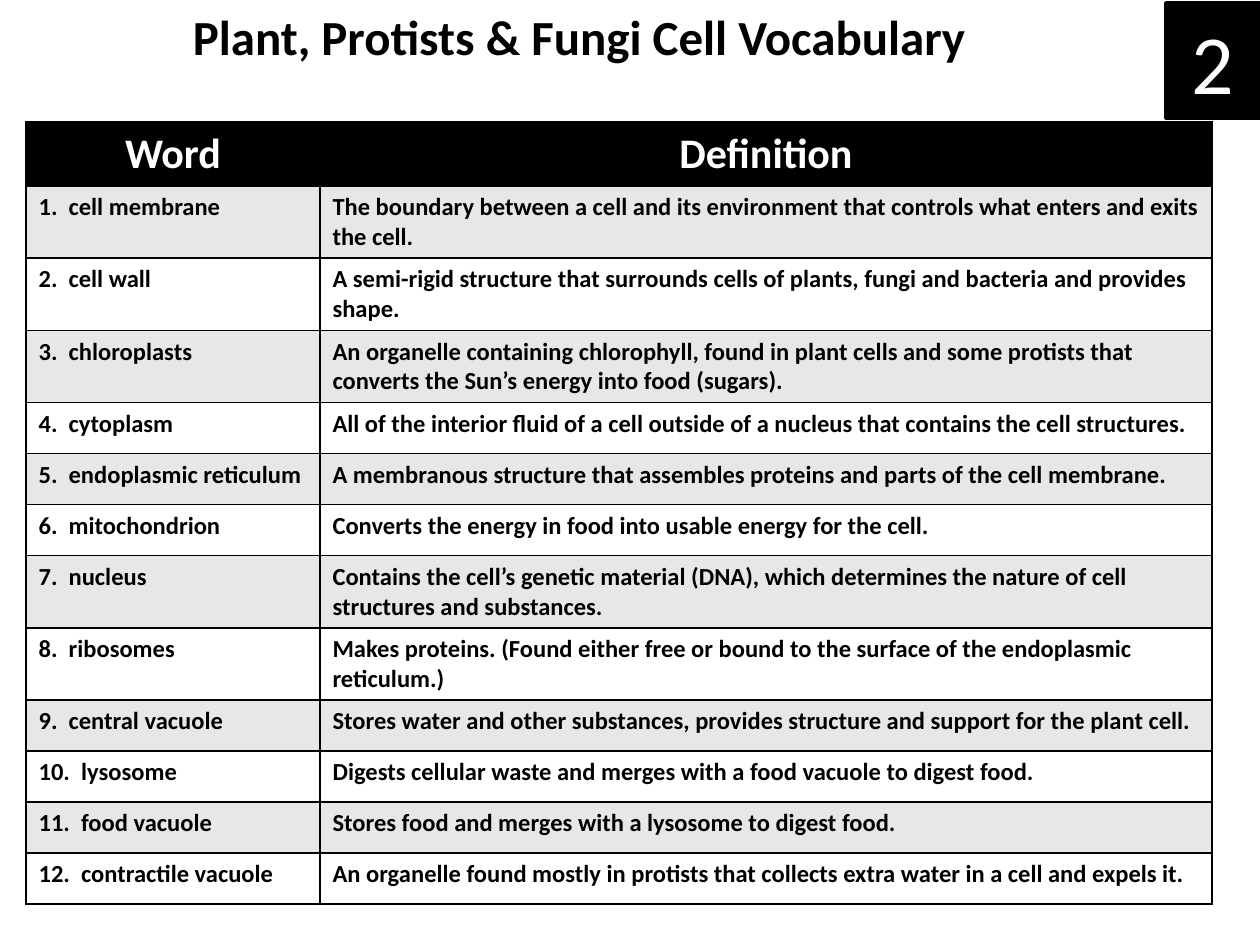
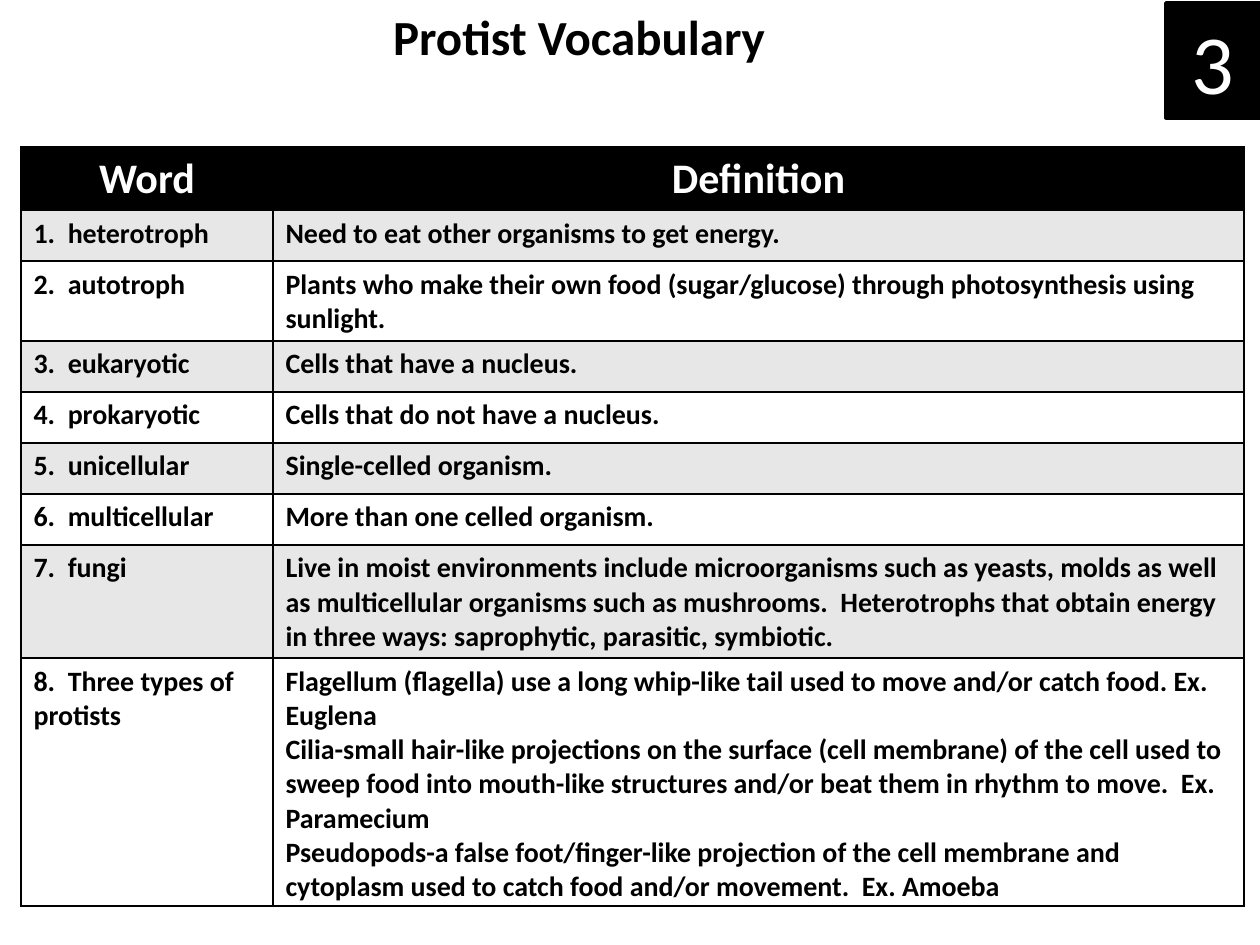
from dataclasses import dataclass

import pptx
import pptx.dml.color
import pptx.enum.shapes
import pptx.enum.text
import pptx.oxml
import pptx.oxml.ns
import pptx.slide
import pptx.table
import pptx.text.text
import pptx.util

# Shared scale, colours and text formats
PX_PER_INCH = 126
BLACK = pptx.dml.color.RGBColor(0x00, 0x00, 0x00)
WHITE = pptx.dml.color.RGBColor(0xFF, 0xFF, 0xFF)
GREY = pptx.dml.color.RGBColor(0xE7, 0xE7, 0xE7)
FONT = "Calibri"
CENTER = pptx.enum.text.PP_ALIGN.CENTER
LEFT = pptx.enum.text.PP_ALIGN.LEFT

TITLE_FORMAT = {"name": FONT, "size": pptx.util.Pt(28), "bold": True}
BADGE_FORMAT = {"name": FONT, "size": pptx.util.Pt(48), "bold": False}
HEADER_FORMAT = {"name": FONT, "size": pptx.util.Pt(24), "bold": True}

# Shared layout, in px
TITLE_CENTER, TITLE_HEIGHT = 579, 72
BADGE_BOX = (1166, 3, 94, 115)
HEADER_HEIGHT, ROW_HEIGHT = 49, 51


@dataclass(frozen=True)
class Term:
    word: str
    definition: str


@dataclass(frozen=True)
class VocabularyPage:
    number: int
    title: str
    title_width: int
    left: int
    top: int
    word_width: int
    definition_width: int
    text_size: int
    terms: tuple[Term, ...]


CELL_TERMS = (
    Term("cell membrane", "The boundary between a cell and its environment that "
         "controls what enters and exits the cell."),
    Term("cell wall", "A semi-rigid structure that surrounds cells of plants, fungi "
         "and bacteria and provides shape."),
    Term("chloroplasts", "An organelle containing chlorophyll, found in plant cells and "
         "some protists that converts the Sun’s energy into food (sugars)."),
    Term("cytoplasm", "All of the interior fluid of a cell outside of a nucleus that "
         "contains the cell structures."),
    Term("endoplasmic reticulum", "A membranous structure that assembles proteins and "
         "parts of the cell membrane."),
    Term("mitochondrion", "Converts the energy in food into usable energy for the cell."),
    Term("nucleus", "Contains the cell’s genetic material (DNA), which determines the "
         "nature of cell structures and substances."),
    Term("ribosomes", "Makes proteins. (Found either free or bound to the surface of "
         "the endoplasmic reticulum.)"),
    Term("central vacuole", "Stores water and other substances, provides structure and "
         "support for the plant cell."),
    Term("lysosome", "Digests cellular waste and merges with a food vacuole to digest food."),
    Term("food vacuole", "Stores food and merges with a lysosome to digest food."),
    Term("contractile vacuole", "An organelle found mostly in protists that collects "
         "extra water in a cell and expels it."),
)

PROTIST_TERMS = (
    Term("heterotroph", "Need to eat other organisms to get energy."),
    Term("autotroph", "Plants who make their own food (sugar/glucose) through "
         "photosynthesis using sunlight."),
    Term("eukaryotic", "Cells that have a nucleus."),
    Term("prokaryotic", "Cells that do not have a nucleus."),
    Term("unicellular", "Single-celled organism."),
    Term("multicellular", "More than one celled organism."),
    Term("fungi", "Live in moist environments include microorganisms such as yeasts, "
         "molds as well as multicellular organisms such as mushrooms.  Heterotrophs "
         "that obtain energy in three ways: saprophytic, parasitic, symbiotic."),
    Term("Three types of protists",
         "Flagellum (flagella) use a long whip-like tail used to move and/or catch "
         "food. Ex. Euglena\n"
         "Cilia-small hair-like projections on the surface (cell membrane) of the cell "
         "used to sweep food into mouth-like structures and/or beat them in rhythm to "
         "move.  Ex. Paramecium\n"
         "Pseudopods-a false foot/finger-like projection of the cell membrane and "
         "cytoplasm used to catch food and/or movement.  Ex. Amoeba"),
)

PAGES = (
    VocabularyPage(2, "Plant, Protists & Fungi Cell Vocabulary", 808,
                   26, 122, 294, 892, 14, CELL_TERMS),
    VocabularyPage(3, "Protist Vocabulary", 402,
                   21, 147, 252, 971, 16, PROTIST_TERMS),
)


def px(length: int) -> pptx.util.Emu:
    return pptx.util.Emu(round(length * 914400 / PX_PER_INCH))


def write(frame: pptx.text.text.TextFrame, text: str, formats: dict,
          color: pptx.dml.color.RGBColor, align=CENTER) -> None:
    """Fill a text frame, one paragraph a line, in one format."""
    frame.text = text
    for para in frame.paragraphs:
        para.alignment = align
        for span in para.runs:
            for name, value in formats.items():
                setattr(span.font, name, value)
            span.font.color.rgb = color


def add_borders(cell: pptx.table._Cell) -> None:
    """Give a cell black one-point lines on all sides."""
    properties = cell._tc.get_or_add_tcPr()
    for side in ("lnL", "lnR", "lnT", "lnB"):
        properties.append(pptx.oxml.parse_xml(
            f'<a:{side} {pptx.oxml.ns.nsdecls("a")} w="{pptx.util.Pt(1)}">'
            f'<a:solidFill><a:srgbClr val="{BLACK}"/></a:solidFill></a:{side}>'))


def draw_table(slide: pptx.slide.Slide, page: VocabularyPage) -> None:
    widths = (page.word_width, page.definition_width)
    rows = [("Word", "Definition")]
    rows += [(f"{number}.  {term.word}", term.definition)
             for number, term in enumerate(page.terms, 1)]
    height = HEADER_HEIGHT + ROW_HEIGHT * len(page.terms)
    table = slide.shapes.add_table(len(rows), len(widths), px(page.left), px(page.top),
                                   px(sum(widths)), px(height)).table
    table.first_row = table.horz_banding = False
    for column, width in zip(table.columns, widths):
        column.width = px(width)

    term_format = HEADER_FORMAT | {"size": pptx.util.Pt(page.text_size)}
    for index, texts in enumerate(rows):
        if index == 0:
            row_height, fill, style = HEADER_HEIGHT, BLACK, (HEADER_FORMAT, WHITE, CENTER)
        else:
            row_height, style = ROW_HEIGHT, (term_format, BLACK, LEFT)
            fill = GREY if index % 2 else WHITE
        table.rows[index].height = px(row_height)
        for cell, text in zip(table.rows[index].cells, texts):
            add_borders(cell)
            cell.fill.solid()
            cell.fill.fore_color.rgb = fill
            write(cell.text_frame, text, *style)


def draw_badge(slide: pptx.slide.Slide, number: int) -> None:
    badge = slide.shapes.add_shape(pptx.enum.shapes.MSO_SHAPE.RECTANGLE,
                                   *map(px, BADGE_BOX))
    badge.shadow.inherit = False
    badge.fill.solid()
    badge.fill.fore_color.rgb = BLACK
    badge.line.color.rgb = BLACK
    badge.line.width = pptx.util.Pt(2)
    write(badge.text_frame, str(number), BADGE_FORMAT, WHITE)


def draw_title(slide: pptx.slide.Slide, title: str, width: int) -> None:
    box = slide.shapes.add_textbox(px(TITLE_CENTER - width // 2), px(0),
                                   px(width), px(TITLE_HEIGHT))
    box.text_frame.word_wrap = False
    write(box.text_frame, title, TITLE_FORMAT, BLACK)


def main() -> None:
    deck = pptx.Presentation()
    deck.slide_width, deck.slide_height = px(1260), px(945)
    for page in PAGES:
        slide = deck.slides.add_slide(deck.slide_layouts[6])
        draw_table(slide, page)
        draw_badge(slide, page.number)
        draw_title(slide, page.title, page.title_width)
    deck.save("out.pptx")


if __name__ == "__main__":
    main()
